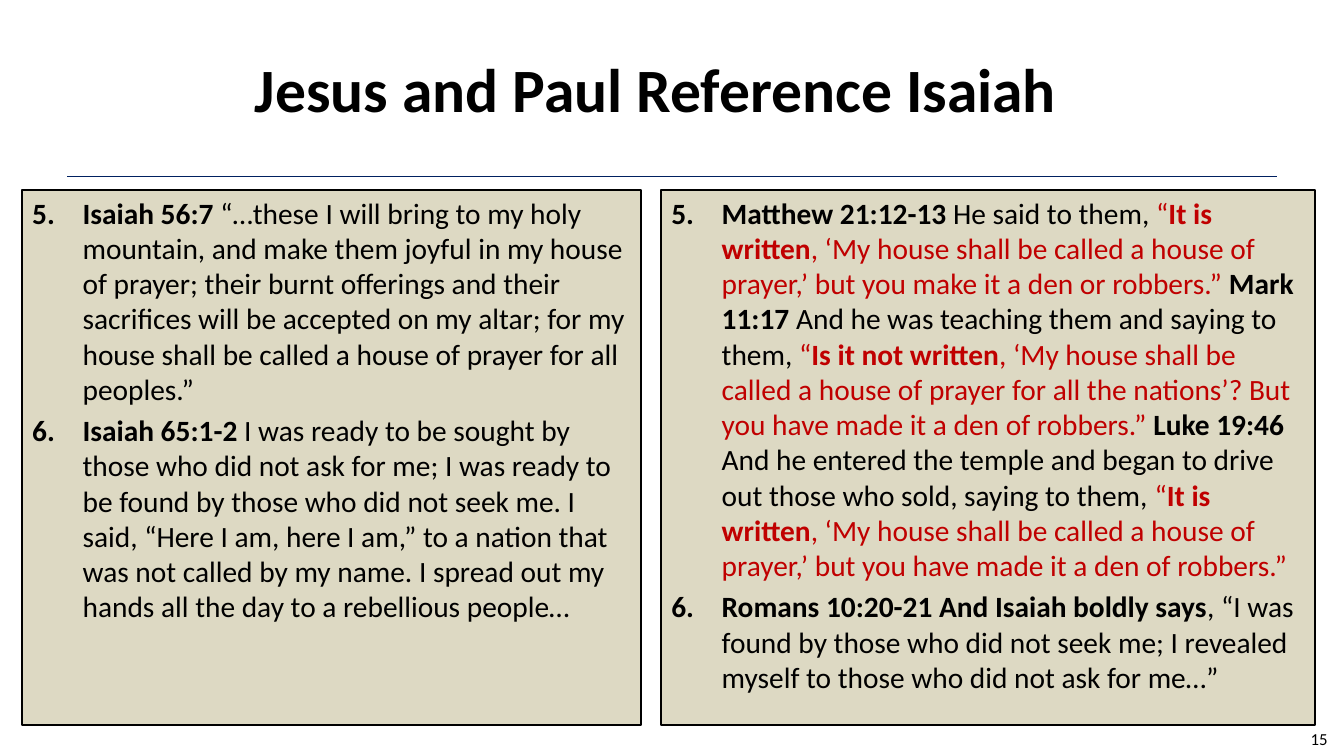
from lxml import etree
from pptx import Presentation
from pptx.dml.color import RGBColor
from pptx.enum.shapes import MSO_CONNECTOR
from pptx.enum.text import MSO_ANCHOR, MSO_AUTO_SIZE, PP_ALIGN
from pptx.oxml.ns import qn
from pptx.util import Pt

STRAIGHT = MSO_CONNECTOR.STRAIGHT
MIDDLE, TOP = MSO_ANCHOR.MIDDLE, MSO_ANCHOR.TOP
NO_AUTOFIT = MSO_AUTO_SIZE.NONE
LEFT, CENTER, RIGHT = PP_ALIGN.LEFT, PP_ALIGN.CENTER, PP_ALIGN.RIGHT

BLACK = RGBColor(0x00, 0x00, 0x00)
RED = RGBColor(0xC0, 0x00, 0x00)
NAVY = RGBColor(0x00, 0x20, 0x60)
TAN = RGBColor(0xDD, 0xD9, 0xC3)
FONT = "Calibri"

# Run styles: (bold, colour)
PLAIN, BOLD = (False, BLACK), (True, BLACK)
SPOKEN, STRESSED = (False, RED), (True, RED)

# Content
TITLE = "Jesus and Paul Reference Isaiah"
PAGE_NUMBER = "15"
FIRST_NUMBER = 5

ISAIAH = [
    [("Isaiah 56:7 ", BOLD),
     ("“…these I will bring to my holy mountain, and make them joyful in my house of prayer; "
      "their burnt offerings and their sacrifices will be accepted on my altar; for my house "
      "shall be called a house of prayer for all peoples.”", PLAIN)],
    [("Isaiah 65:1-2 ", BOLD),
     ("I was ready to be sought by those who did not ask for me; I was ready to be found by "
      "those who did not seek me. I said, “Here I am, here I am,” to a nation that was not "
      "called by my name. I spread out my hands all the day to a rebellious people…", PLAIN)],
]
NEW_TESTAMENT = [
    [("Matthew 21:12-13 ", BOLD),
     ("He said to them, ", PLAIN),
     ("“", SPOKEN),
     ("It is written", STRESSED),
     (", ‘My house shall be called a house of prayer,’ but you make it a den or robbers.” ",
      SPOKEN),
     ("Mark 11:17 ", BOLD),
     ("And he was teaching them and saying to them, ", PLAIN),
     ("“", SPOKEN),
     ("Is it not written", STRESSED),
     (", ‘My house shall be called a house of prayer for all the nations’? But you have made "
      "it a den of robbers.” ", SPOKEN),
     ("Luke 19:46 ", BOLD),
     ("And he entered the temple and began to drive out those who sold, saying to them, ",
      PLAIN),
     ("“", SPOKEN),
     ("It is written", STRESSED),
     (", ‘My house shall be called a house of prayer,’ but you have made it a den of robbers.”",
      SPOKEN)],
    [("Romans 10:20-21 And Isaiah boldly says", BOLD),
     (", “I was found by those who did not seek me; I revealed myself to those who did not "
      "ask for me…”", PLAIN)],
]

# Layout in points
SLIDE_WIDTH, SLIDE_HEIGHT = 960, 540
TITLE_BOX = (36.7, 18, 864, 90)
NUMBER_BOX = (883.4, 513.4, 72, 28.8)
RULE_LEFT, RULE_RIGHT, RULE_TOP = 48, 912, 126
PANEL_TOP, PANEL_HEIGHT = 135.4, 382.3
PANELS = [(15.8, 442.1, ISAIAH), (472.3, 467.3, NEW_TESTAMENT)]  # left, width, passages
HANGING = 36
PASSAGE_GAP = 4.2


def place(shape, box, anchor):
    shape.left, shape.top, shape.width, shape.height = map(Pt, box)
    frame = shape.text_frame
    frame.word_wrap = True
    frame.auto_size = NO_AUTOFIT
    frame.vertical_anchor = anchor
    return frame


def add_run(paragraph, text, size, style):
    run = paragraph.add_run()
    run.text = text
    run.font.name, run.font.size = FONT, Pt(size)
    run.font.bold, run.font.color.rgb = style


def number_paragraph(paragraph):
    properties = paragraph._p.get_or_add_pPr()
    properties.set("marL", str(Pt(HANGING)))
    properties.set("indent", str(-Pt(HANGING)))
    etree.SubElement(properties, qn("a:buFont"), typeface="+mj-lt")
    etree.SubElement(properties, qn("a:buAutoNum"), type="arabicPeriod",
                     startAt=str(FIRST_NUMBER))


def fill_panel(panel, left, width, passages):
    frame = place(panel, (left, PANEL_TOP, width, PANEL_HEIGHT), TOP)
    panel.fill.solid()
    panel.fill.fore_color.rgb = TAN
    panel.line.color.rgb = BLACK
    panel.line.width = Pt(1.5)
    for index, passage in enumerate(passages):
        paragraph = frame.add_paragraph() if index else frame.paragraphs[0]
        number_paragraph(paragraph)
        paragraph.alignment = LEFT
        paragraph.space_before = Pt(PASSAGE_GAP if index else 0)
        for text, style in passage:
            add_run(paragraph, text, 21, style)


def main():
    presentation = Presentation()
    presentation.slide_width, presentation.slide_height = Pt(SLIDE_WIDTH), Pt(SLIDE_HEIGHT)
    two_content = presentation.slide_layouts[3]
    slide = presentation.slides.add_slide(two_content)
    title, *panels = slide.placeholders

    # Title
    paragraph = place(title, TITLE_BOX, MIDDLE).paragraphs[0]
    paragraph.alignment = CENTER
    add_run(paragraph, TITLE, 44, BOLD)

    # Page number
    number_box = slide.shapes.add_textbox(0, 0, 0, 0)
    paragraph = place(number_box, NUMBER_BOX, MIDDLE).paragraphs[0]
    paragraph.alignment = RIGHT
    add_run(paragraph, PAGE_NUMBER, 12, PLAIN)

    # Rule under the title
    rule = slide.shapes.add_connector(STRAIGHT, Pt(RULE_LEFT), Pt(RULE_TOP),
                                      Pt(RULE_RIGHT), Pt(RULE_TOP))
    rule.line.color.rgb = NAVY
    rule.line.width = Pt(0.75)
    etree.SubElement(rule._element.spPr, qn("a:effectLst"))

    # Scripture panels
    for panel, (left, width, passages) in zip(panels, PANELS):
        fill_panel(panel, left, width, passages)

    presentation.save("out.pptx")


if __name__ == "__main__":
    main()
